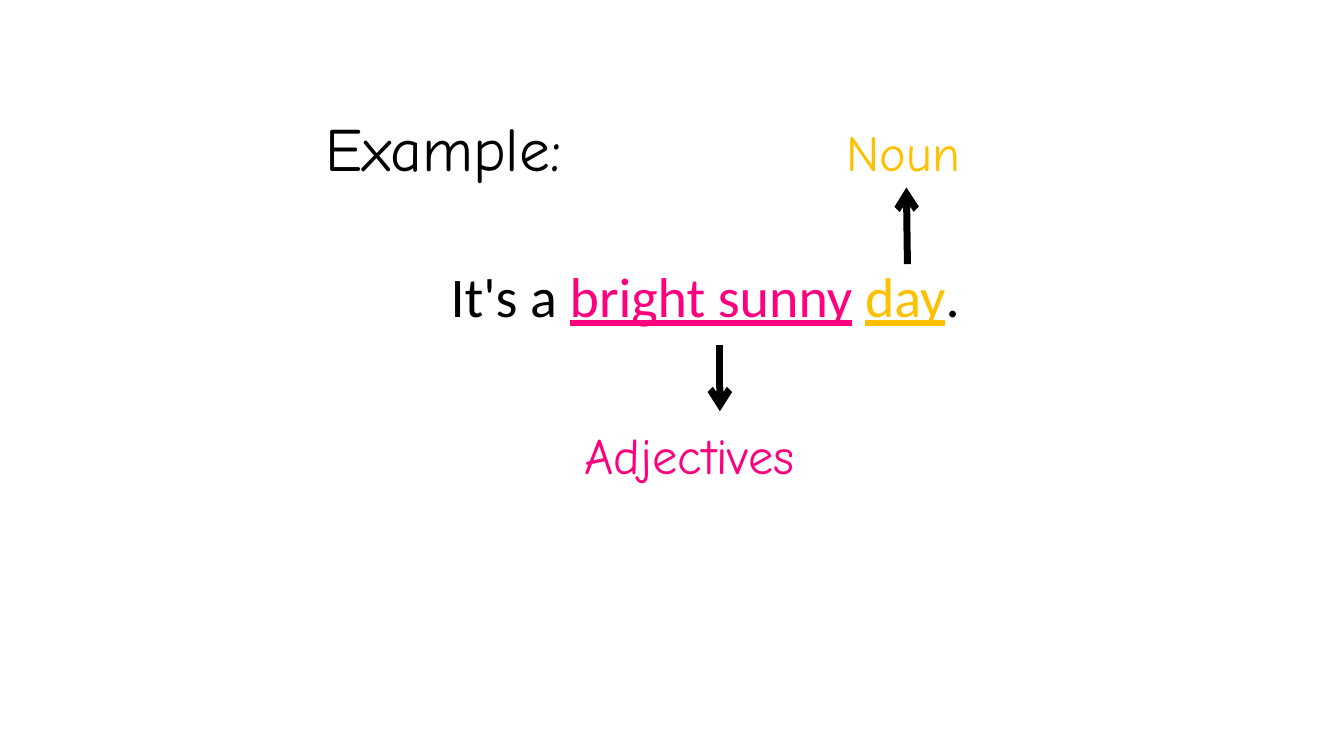
from lxml import etree
from pptx import Presentation
from pptx.dml.color import RGBColor
from pptx.enum.shapes import MSO_CONNECTOR as Connector
from pptx.enum.text import MSO_ANCHOR as Anchor
from pptx.oxml.ns import qn
from pptx.util import Inches, Pt

BLACK, PINK, GOLD = "000000", "FE007E", "FFC000"
HAND, PLAIN = "Comic Neue", "Calibri"


def color(hex_code):
    return RGBColor.from_string(hex_code)


def add_text(slide, box, parts, size, font, anchor=Anchor.TOP, spacing=1.0):
    """Place one line made of (text, colour, underlined) parts."""
    frame = slide.shapes.add_textbox(*map(Inches, box)).text_frame
    frame.word_wrap = True
    frame.vertical_anchor = anchor
    line = frame.paragraphs[0]
    line.line_spacing = spacing
    line.font.size, line.font.name = Pt(size), font
    for text, hex_code, underlined in parts:
        run = line.add_run()
        run.text = text
        run.font.color.rgb = color(hex_code)
        run.font.underline = underlined


def add_arrow(slide, start, end):
    arrow = slide.shapes.add_connector(Connector.STRAIGHT, *map(Inches, start + end))
    arrow.line.color.rgb = color(BLACK)
    arrow.line.width = Pt(5)
    etree.SubElement(arrow.line._get_or_add_ln(), qn("a:tailEnd"), type="arrow")
    etree.SubElement(arrow._element.spPr, qn("a:effectLst"))


def add_heading(slide, box):
    add_text(slide, box, [("Example:", BLACK, False)], 44, HAND, Anchor.MIDDLE, 0.9)


def add_sentence_diagram(slide, box):
    """Sentence with arrows to the names of its word classes."""
    left, top, width, height = box
    sentence = [
        ("It's a ", BLACK, False),
        ("bright sunny", PINK, True),
        (" ", BLACK, False),
        ("day", GOLD, True),
        (".", BLACK, False),
    ]
    add_text(slide, box, sentence, 40, PLAIN, spacing=0.9)

    # Adjectives below the sentence
    adjective_x = left + 2.77
    add_arrow(slide, (adjective_x, top + 0.8), (adjective_x, top + 1.46))
    add_text(slide, (left + 1.33, top + 1.54, 2.88, 0.71),
             [("Adjectives", PINK, False)], 36, HAND)

    # Noun above the sentence
    noun_x = left + 4.63
    add_arrow(slide, (noun_x, top), (noun_x - 0.01, top - 0.76))
    add_text(slide, (left + 3.93, top - 1.47, 1.38, 0.71),
             [("Noun", GOLD, False)], 36, HAND)


def main():
    deck = Presentation()
    deck.slide_width, deck.slide_height = Inches(13.33), Inches(7.5)
    slide = deck.slides.add_slide(deck.slide_layouts[6])
    add_heading(slide, (3.13, 0.89, 9.47, 1.22))
    add_sentence_diagram(slide, (4.37, 2.62, 8.23, 3.77))
    deck.save("out.pptx")


if __name__ == "__main__":
    main()
